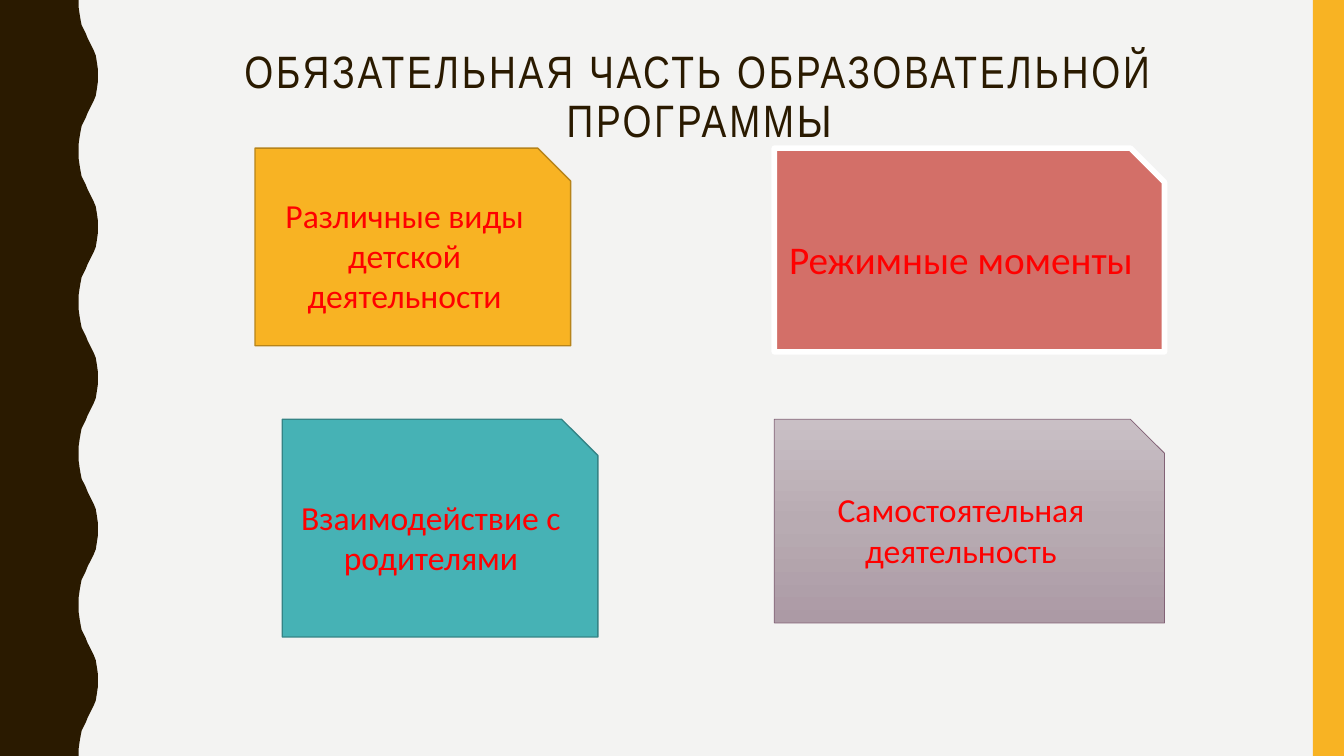
from copy import deepcopy
from dataclasses import dataclass

from pptx import Presentation
from pptx.dml.color import RGBColor
from pptx.enum.shapes import MSO_SHAPE
from pptx.enum.text import MSO_ANCHOR, MSO_AUTO_SIZE, PP_ALIGN
from pptx.oxml.ns import qn
from pptx.shapes.autoshape import Shape
from pptx.slide import Slide
from pptx.text.text import TextFrame
from pptx.util import Pt

SCALE = 9144  # EMU per px, 100 px to the inch
WIDTH, HEIGHT = 1333, 750

PAPER = RGBColor(0xF3, 0xF3, 0xF2)
BROWN = RGBColor(0x2A, 0x1A, 0x00)
AMBER = RGBColor(0xF8, 0xB3, 0x23)
OCHRE = RGBColor(0xB7, 0x84, 0x1A)
CORAL = RGBColor(0xD3, 0x6F, 0x68)
WHITE = RGBColor(0xFF, 0xFF, 0xFF)
TEAL = RGBColor(0x46, 0xB2, 0xB5)
PINE = RGBColor(0x34, 0x84, 0x86)
PLUM = RGBColor(0x82, 0x62, 0x76)
RED = RGBColor(0xFF, 0x00, 0x00)
MAUVES = (RGBColor(0xC9, 0xBF, 0xC5), RGBColor(0xB8, 0xAB, 0xB2),
          RGBColor(0xAC, 0x9A, 0xA5))

RECT = MSO_SHAPE.RECTANGLE
SNIP = MSO_SHAPE.SNIP_1_RECTANGLE
MIDDLE = MSO_ANCHOR.MIDDLE
CENTER = PP_ALIGN.CENTER
NO_FIT = MSO_AUTO_SIZE.NONE

# Wave edge from trough to crest, as x and y
RISE = ((78, 0), (78, 7), (79, 14), (80, 20), (81, 25), (83, 29), (85, 33),
        (87, 38), (89, 42), (91, 46), (93, 50), (95, 55), (96, 61), (97, 68),
        (97, 75))
PERIOD = 150


@dataclass(frozen=True)
class Card:
    text: str
    left: int
    top: int
    width: int
    height: int
    fills: tuple[RGBColor, ...]
    edge: RGBColor
    weight: float = 1
    size: int = 24


CARDS = (
    Card("Различные виды детской деятельности", 253, 147, 313, 196,
         (AMBER,), OCHRE),
    Card("Режимные моменты", 768, 147, 387, 202, (CORAL,), WHITE, 4, 28),
    Card("Взаимодействие с родителями", 280, 416, 313, 216, (TEAL,), PINE),
    Card("Самостоятельная деятельность", 768, 416, 387, 202,
         MAUVES, PLUM, 0.5),
)


def px(count: int) -> int:
    return count * SCALE


def place(shape: Shape, left: int, top: int, width: int, height: int) -> None:
    shape.left, shape.top = px(left), px(top)
    shape.width, shape.height = px(width), px(height)


def write(frame: TextFrame, text: str, font: str, size: float,
          color: RGBColor) -> None:
    """Put one centred run in the frame."""
    frame.word_wrap = True
    frame.vertical_anchor = MIDDLE
    para = frame.paragraphs[0]
    para.alignment = CENTER
    run = para.add_run()
    run.text = text
    run.font.name = font
    run.font.size = Pt(size)
    run.font.color.rgb = color


def paint(shape: Shape, colors: tuple[RGBColor, ...]) -> None:
    """Fill with one colour, or with an even gradient from top to bottom."""
    fill = shape.fill
    if len(colors) == 1:
        fill.solid()
        fill.fore_color.rgb = colors[0]
        return
    fill.gradient()
    fill.gradient_angle = 270
    stops = shape._element.spPr.find(".//" + qn("a:gsLst"))
    for _ in colors[2:]:
        stops.insert(1, deepcopy(stops[0]))
    for index, (stop, color) in enumerate(zip(fill.gradient_stops, colors)):
        stop.position = index / (len(colors) - 1)
        stop.color.rgb = color


def draw_title(slide: Slide) -> None:
    title = slide.shapes.title
    place(title, 137, 42, 1113, 111)
    frame = title.text_frame
    frame.auto_size = NO_FIT
    write(frame, "ОБЯЗАТЕЛЬНАЯ ЧАСТЬ ОБРАЗОВАТЕЛЬНОЙ ПРОГРАММЫ",
          "Arial Narrow", 32.4, BROWN)
    para = frame.paragraphs[0]
    para.line_spacing = 0.9
    para.runs[0].font._element.set("spc", "200")


def draw_wave(slide: Slide) -> None:
    fall = tuple((x, PERIOD - y) for x, y in reversed(RISE[:-1]))
    edge = [(x, y + start) for start in range(0, HEIGHT, PERIOD)
            for x, y in RISE + fall]
    outline = slide.shapes.build_freeform(0, 0, scale=SCALE)
    outline.add_line_segments(edge + [(0, HEIGHT)], close=True)
    wave = outline.convert_to_shape()
    wave.shadow.inherit = False
    paint(wave, (BROWN,))
    wave.line.fill.background()


def draw_bar(slide: Slide) -> None:
    bar = slide.shapes.add_shape(RECT, px(1302), 0, px(31), px(HEIGHT))
    bar.shadow.inherit = False
    paint(bar, (AMBER,))
    bar.line.fill.background()


def draw_card(slide: Slide, card: Card) -> None:
    shape = slide.shapes.add_shape(SNIP, px(card.left), px(card.top),
                                   px(card.width), px(card.height))
    shape.shadow.inherit = False
    paint(shape, card.fills)
    shape.line.color.rgb = card.edge
    shape.line.width = Pt(card.weight)
    write(shape.text_frame, card.text, "Calibri", card.size, RED)


def main() -> None:
    deck = Presentation()
    deck.slide_width, deck.slide_height = px(WIDTH), px(HEIGHT)
    slide = deck.slides.add_slide(deck.slide_layouts.get_by_name("Title Only"))
    back = slide.background.fill
    back.solid()
    back.fore_color.rgb = PAPER
    draw_wave(slide)
    draw_bar(slide)
    draw_title(slide)
    for card in CARDS:
        draw_card(slide, card)
    deck.save("out.pptx")


if __name__ == "__main__":
    main()
